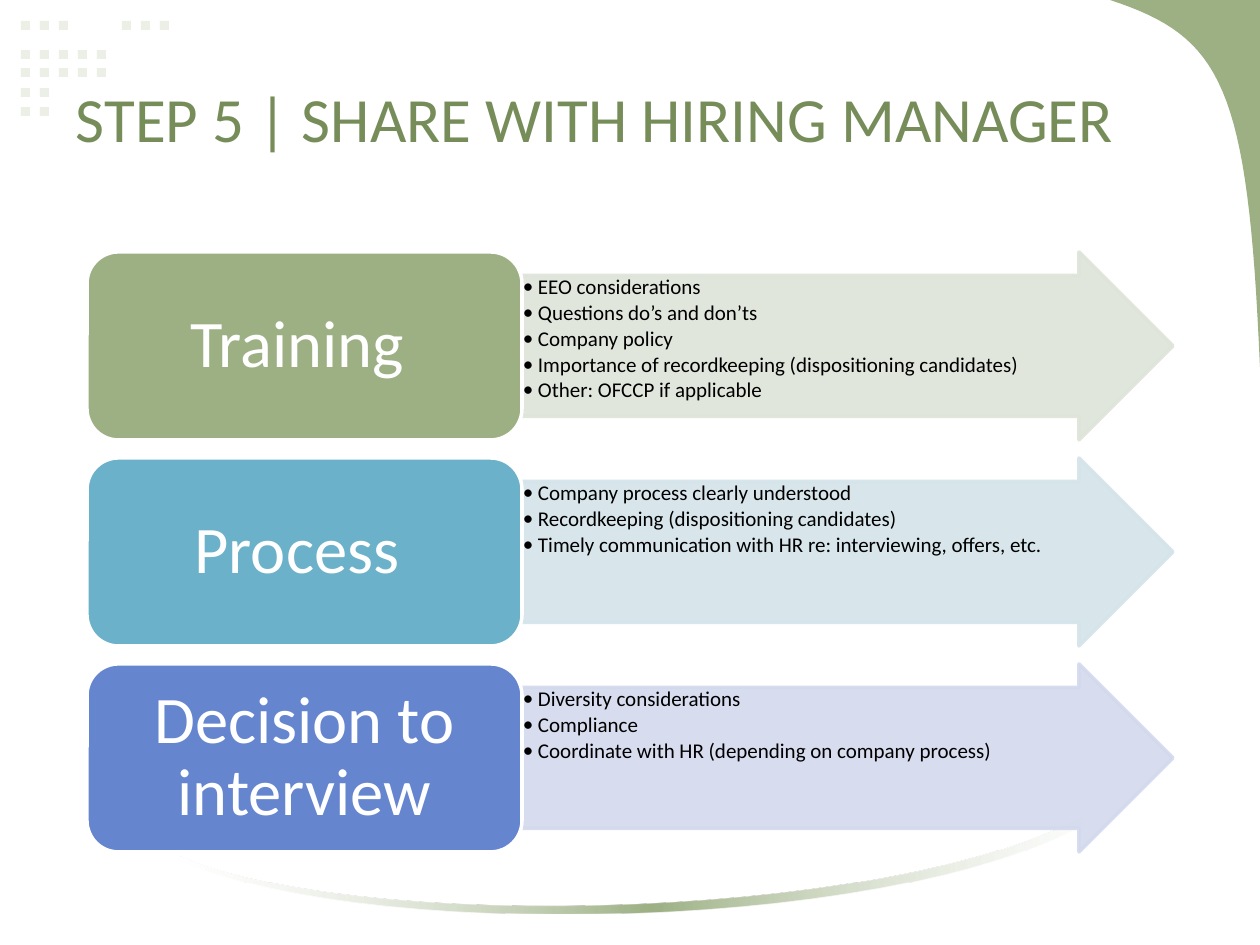
import pptx
import pptx.util
import pptx.oxml
import pptx.oxml.ns
import pptx.dml.color
import pptx.enum.shapes
import pptx.enum.text
from lxml import etree

RGB = pptx.dml.color.RGBColor
SHAPE = pptx.enum.shapes.MSO_SHAPE
ANCHOR = pptx.enum.text.MSO_ANCHOR
ALIGN = pptx.enum.text.PP_ALIGN
Pt = pptx.util.Pt
qn = pptx.oxml.ns.qn

WHITE = RGB(0xFF, 0xFF, 0xFF)
BLACK = RGB(0, 0, 0)
GREEN = RGB(0x9C, 0xB0, 0x84)
DARK_GREEN = RGB(0x76, 0x8D, 0x5A)
PALE_GREEN = RGB(0xDE, 0xE4, 0xD9)
DOT_GREEN = RGB(0xEB, 0xEF, 0xE6)
TEAL = RGB(0x6B, 0xB1, 0xC9)
PALE_TEAL = RGB(0xD4, 0xE4, 0xEB)
BLUE = RGB(0x65, 0x85, 0xCF)
PALE_BLUE = RGB(0xD3, 0xD9, 0xED)

TITLE = "STEP 5 | SHARE WITH HIRING MANAGER"
STEPS = [
    ("Training ", GREEN, PALE_GREEN, [
        "EEO considerations",
        "Questions do’s and don’ts",
        "Company policy",
        "Importance of recordkeeping (dispositioning candidates)",
        "Other: OFCCP if applicable"]),
    ("Process ", TEAL, PALE_TEAL, [
        "Company process clearly understood",
        "Recordkeeping (dispositioning candidates)",
        "Timely communication with HR re: interviewing, offers, etc."]),
    ("Decision to interview", BLUE, PALE_BLUE, [
        "Diversity considerations",
        "Compliance",
        "Coordinate with HR (depending on company process)"]),
]

FONT = "Calibri"
SCALE = 914400 / 126
SLIDE_W, SLIDE_H = 1260, 945

DOT_SIZE, DOT_PITCH = 9, 19
DOT_RUNS = [(21, 21, 3), (122, 21, 3), (21, 50, 5), (21, 68, 5), (21, 88, 2), (21, 107, 2)]

CURVE_STEPS = 32
CORNER_CURVE = [(1260, 367), (1248, 84), (1222, 37), (1110, 0)]
SWOOSH_LOWER = [(1124, 796), (980, 930), (370, 948), (179, 859)]
SWOOSH_UPPER = [(179, 856), (375, 940), (985, 917), (1124, 788)]
SWOOSH_STOPS = [(0, WHITE, 30), (50, GREEN, 100), (100, WHITE, 30)]

BOX_X, BOX_W = 87, 435
ARROW_X, ARROW_W = BOX_X + BOX_W, 651
STEP_Y, STEP_H, STEP_PITCH = 252, 188, 206
BULLET_INDENT = 15


def px(n):
    return pptx.util.Emu(round(n * SCALE))


def bezier(controls):
    points = []
    for i in range(CURVE_STEPS + 1):
        t = i / CURVE_STEPS
        weights = ((1 - t) ** 3, 3 * t * (1 - t) ** 2, 3 * t * t * (1 - t), t ** 3)
        points.append(tuple(sum(w * c[axis] for w, c in zip(weights, controls))
                            for axis in (0, 1)))
    return points


def set_alpha(element, percent):
    for color in element.iter(qn("a:srgbClr")):
        etree.SubElement(color, qn("a:alpha")).set("val", str(percent * 1000))


def style(sp, fill, line=None):
    sp.shadow.inherit = False
    sp.fill.solid()
    sp.fill.fore_color.rgb = fill
    if line is None:
        sp.line.fill.background()
    else:
        sp.line.color.rgb = line
        sp.line.width = Pt(2)
    return sp


def add_shape(kind, x, y, w, h, fill, line=None):
    return style(s.shapes.add_shape(kind, px(x), px(y), px(w), px(h)), fill, line)


def add_outline(points, fill):
    start, *rest = [(px(x), px(y)) for x, y in points]
    builder = s.shapes.build_freeform(*start)
    builder.add_line_segments(rest, close=True)
    return style(builder.convert_to_shape(), fill)


def fill_gradient(sp, stops):
    sp.fill.gradient()
    sp.fill.gradient_angle = 0
    gs_list = sp._element.spPr.find(".//" + qn("a:gsLst"))
    for gs in list(gs_list):
        gs_list.remove(gs)
    for position, color, opacity in stops:
        gs = etree.SubElement(gs_list, qn("a:gs"))
        gs.set("pos", str(position * 1000))
        etree.SubElement(gs, qn("a:srgbClr")).set("val", str(color))
        set_alpha(gs, opacity)


def add_bullet(p):
    pPr = p._p.get_or_add_pPr()
    pPr.set("marL", str(px(BULLET_INDENT)))
    pPr.set("indent", str(-px(BULLET_INDENT)))
    etree.SubElement(pPr, qn("a:buFont")).set("typeface", FONT)
    etree.SubElement(pPr, qn("a:buChar")).set("char", "•")


def write(sp, *lines, size, color, align=ALIGN.LEFT, anchor=ANCHOR.MIDDLE,
          inset=(13, 6), spacing=1.0, after=0, bullet=False):
    tf = sp.text_frame
    tf.word_wrap = True
    tf.vertical_anchor = anchor
    tf.margin_left = tf.margin_right = px(inset[0])
    tf.margin_top = tf.margin_bottom = px(inset[1])
    for i, line in enumerate(lines):
        p = tf.add_paragraph() if i else tf.paragraphs[0]
        p.alignment = align
        p.line_spacing = spacing
        p.space_after = Pt(after)
        if bullet:
            add_bullet(p)
        r = p.add_run()
        r.text = line
        r.font.name = FONT
        r.font.size = Pt(size)
        r.font.color.rgb = color


def add_background():
    for x, y, count in DOT_RUNS:
        for i in range(count):
            add_shape(SHAPE.RECTANGLE, x + i * DOT_PITCH, y, DOT_SIZE, DOT_SIZE, DOT_GREEN)
    add_outline([(SLIDE_W, 0)] + bezier(CORNER_CURVE), GREEN)
    swoosh = add_outline(bezier(SWOOSH_LOWER) + bezier(SWOOSH_UPPER), GREEN)
    fill_gradient(swoosh, SWOOSH_STOPS)


def add_step(y, name, color, pale, points):
    arrow = add_shape(SHAPE.RIGHT_ARROW, ARROW_X, y, ARROW_W, STEP_H, pale, pale)
    arrow.adjustments[0] = 0.75
    arrow.adjustments[1] = 0.5
    set_alpha(arrow._element.spPr, 90)
    write(arrow, *points, size=12, color=BLACK, anchor=ANCHOR.TOP, inset=(1, 1),
          spacing=0.9, after=1.8, bullet=True)
    box = add_shape(SHAPE.ROUNDED_RECTANGLE, BOX_X, y, BOX_W, STEP_H, color, WHITE)
    write(box, name, size=38, color=WHITE, align=ALIGN.CENTER, inset=(20, 10), spacing=0.9)


prs = pptx.Presentation()
prs.slide_width, prs.slide_height = px(SLIDE_W), px(SLIDE_H)
s = prs.slides.add_slide(prs.slide_layouts[6])

add_background()
title = s.shapes.add_textbox(px(63), px(38), px(1134), px(158))
write(title, TITLE, size=36, color=DARK_GREEN)
for i, step in enumerate(STEPS):
    add_step(STEP_Y + i * STEP_PITCH, *step)

prs.save("out.pptx")
